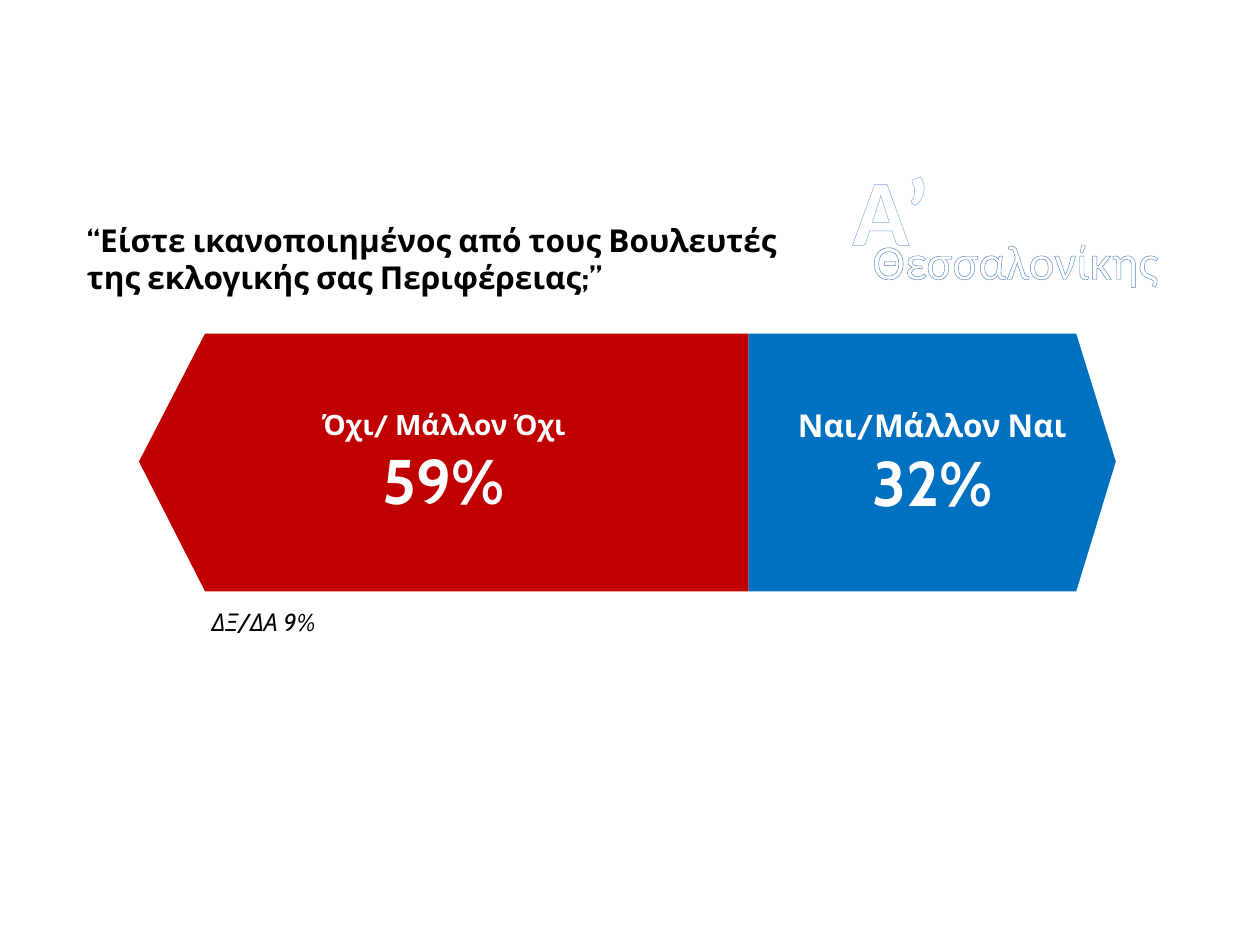
from pptx import Presentation
from pptx.dml.color import RGBColor
from pptx.enum.text import MSO_ANCHOR as Anchor, MSO_AUTO_SIZE as AutoSize, PP_ALIGN as Align
from pptx.oxml import parse_xml
from pptx.oxml.ns import nsdecls
from pptx.util import Pt

THEME = {
    "black": "000000", "white": "FFFFFF", "no": "C00000", "yes": "0070C0",
    "letter_line": "7EA6EA", "region_line": "4F81BD",
    "font": "Cabin", "region_font": "Calibri",
    "question": 18, "no_label": 16, "yes_label": 18, "share": 36,
    "note": 14, "letter": 54, "region": 28,
}


def write(para, text, size, color, font=THEME["font"], **style):
    span = para.add_run()
    span.text = text
    values = {"name": font, "size": Pt(size), **style}
    for name, value in values.items():
        setattr(span.font, name, value)
    span.font.color.rgb = RGBColor.from_string(THEME[color])
    return span


def add_label(page, left, top, width, height):
    box = page.shapes.add_textbox(Pt(left), Pt(top), Pt(width), Pt(height))
    box.text_frame.word_wrap = False
    box.text_frame.auto_size = AutoSize.SHAPE_TO_FIT_TEXT
    return box.text_frame.paragraphs[0]


deck = Presentation()
deck.slide_width, deck.slide_height = Pt(720), Pt(540)
page = deck.slides.add_slide(deck.slide_layouts[5])

# Question
title = page.shapes.title
title.left, title.top, title.width, title.height = Pt(42.5), Pt(122.4), Pt(442), Pt(51)
frame = title.text_frame
frame.vertical_anchor = Anchor.TOP
frame.auto_size = AutoSize.NONE
frame.word_wrap = True
frame.paragraphs[0].alignment = Align.LEFT
write(frame.paragraphs[0],
      "“Είστε ικανοποιημένος από τους Βουλευτές της εκλογικής σας Περιφέρειας;”",
      THEME["question"], "black", bold=True)

# Two answers: flat edges meet at the split, tips point outwards
TOP, MIDDLE, BOTTOM, SPLIT = 190.6, 263.8, 338, 427.8
answers = [
    ("no", 117.2, 79.4, "Όχι/ Μάλλον Όχι", "59%"),
    ("yes", 615, 637.6, "Ναι/Μάλλον Ναι", "32%"),
]
for answer, shoulder, tip, label, share in answers:
    outline = page.shapes.build_freeform(Pt(shoulder), Pt(BOTTOM))
    corners = [(SPLIT, BOTTOM), (SPLIT, TOP), (shoulder, TOP), (tip, MIDDLE)]
    outline.add_line_segments([(Pt(x), Pt(y)) for x, y in corners], close=True)
    arrow = outline.convert_to_shape()
    arrow.shadow.inherit = False
    arrow.fill.solid()
    arrow.fill.fore_color.rgb = RGBColor.from_string(THEME[answer])
    arrow.line.fill.background()

    frame = arrow.text_frame
    frame.word_wrap = False
    frame.vertical_anchor = Anchor.MIDDLE
    lines = [(label, THEME[f"{answer}_label"]), (share, THEME["share"])]
    for para, (text, size) in zip([frame.paragraphs[0], frame.add_paragraph()], lines):
        para.alignment = Align.CENTER
        write(para, text, size, "white", bold=True)

# Undecided share
para = add_label(page, 113.8, 343.4, 75.6, 24.5)
write(para, "ΔΞ/ΔΑ 9%", THEME["note"], "black", italic=True)

# Constituency in outlined letters
outlined = [
    ("A’", "letter", (478.8, 82.8, 60.5, 72.7), 2.48, True),
    ("Θεσσαλονίκης", "region", (490.3, 128.2, 180, 41), 0.8, False),
]
for text, role, place, line_width, bold in outlined:
    para = add_label(page, *place)
    para.alignment = Align.CENTER
    span = write(para, text, THEME[role], "white", THEME["region_font"], bold=bold)
    color = THEME[f"{role}_line"]
    span.font._element.insert(0, parse_xml(
        f'<a:ln {nsdecls("a")} w="{Pt(line_width)}"><a:solidFill>'
        f'<a:srgbClr val="{color}"/></a:solidFill></a:ln>'))

deck.save("out.pptx")
